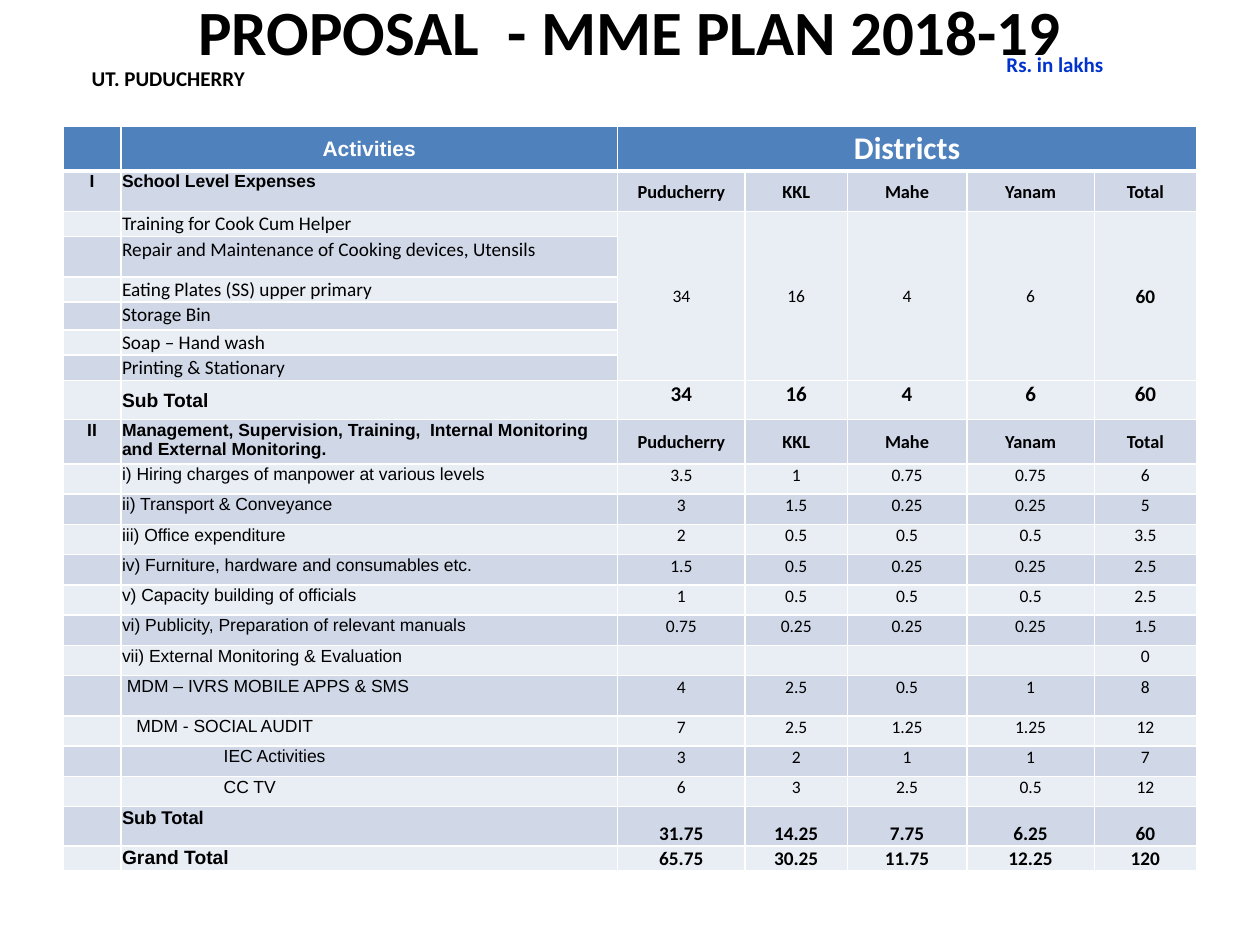
from lxml import etree
from pptx import Presentation
from pptx.dml.color import RGBColor
from pptx.enum.text import MSO_ANCHOR, PP_ALIGN
from pptx.oxml.ns import qn
from pptx.util import Cm, Pt

LEFT, CENTER = PP_ALIGN.LEFT, PP_ALIGN.CENTER
TOP, MIDDLE, BOTTOM = MSO_ANCHOR.TOP, MSO_ANCHOR.MIDDLE, MSO_ANCHOR.BOTTOM
COLORS = {"header": "4F81BD", "dark": "D0D8E8", "light": "E9EDF4",
          "white": "FFFFFF", "black": "000000", "blue": "0033CC"}

# Content: kind of row, number, activity, district values
DISTRICTS = ["Puducherry", "KKL", "Mahe", "Yanam", "Total"]
ROWS = [
    ("header", "", "Activities", ["Districts"]),
    ("section", "I", "School Level Expenses", DISTRICTS),
    ("school", "", "Training for Cook Cum Helper", ["34", "16", "4", "6", "60"]),
    ("school", "", "Repair and Maintenance of Cooking devices, Utensils", []),
    ("school", "", "Eating Plates (SS) upper primary", []),
    ("school", "", "Storage Bin", []),
    ("school", "", "Soap – Hand wash", []),
    ("school", "", "Printing & Stationary", []),
    ("school total", "", "Sub Total", ["34", "16", "4", "6", "60"]),
    ("section", "II", "Management, Supervision, Training,  Internal Monitoring "
     "and External Monitoring.", DISTRICTS),
    ("item", "", "i) Hiring charges of manpower at various levels",
     ["3.5", "1", "0.75", "0.75", "6"]),
    ("item", "", "ii) Transport & Conveyance", ["3", "1.5", "0.25", "0.25", "5"]),
    ("item", "", "iii) Office expenditure", ["2", "0.5", "0.5", "0.5", "3.5"]),
    ("item", "", "iv) Furniture, hardware and consumables etc.",
     ["1.5", "0.5", "0.25", "0.25", "2.5"]),
    ("item", "", "v) Capacity building of officials", ["1", "0.5", "0.5", "0.5", "2.5"]),
    ("item", "", "vi) Publicity, Preparation of relevant manuals",
     ["0.75", "0.25", "0.25", "0.25", "1.5"]),
    ("item", "", "vii) External Monitoring & Evaluation", ["", "", "", "", "0"]),
    ("item", "", "MDM – IVRS MOBILE APPS & SMS", ["4", "2.5", "0.5", "1", "8"]),
    ("item", "", "MDM - SOCIAL AUDIT", ["7", "2.5", "1.25", "1.25", "12"]),
    ("item", "", "IEC Activities", ["3", "2", "1", "1", "7"]),
    ("item", "", "CC TV", ["6", "3", "2.5", "0.5", "12"]),
    ("plan total", "", "Sub Total", ["31.75", "14.25", "7.75", "6.25", "60"]),
    ("grand total", "", "Grand Total", ["65.75", "30.25", "11.75", "12.25", "120"]),
]
INDENTS = {"MDM – IVRS MOBILE APPS & SMS": 0.1, "MDM - SOCIAL AUDIT": 0.29,
           "IEC Activities": 2.05, "CC TV": 2.05}

# Format of the activity and of the values, by kind of row
ARIAL_BOLD = dict(font="Arial", bold=True)
FORMATS = {
    "header": (dict(ARIAL_BOLD, size=12, color="white", align=CENTER, anchor=MIDDLE),
               dict(size=18, bold=True, color="white", anchor=MIDDLE)),
    "section": (dict(ARIAL_BOLD), dict(size=10.5, bold=True, anchor=MIDDLE)),
    "school": (dict(size=11), dict(anchor=MIDDLE)),
    "school total": (dict(ARIAL_BOLD, size=11, anchor=MIDDLE), dict(size=12, bold=True)),
    "item": (dict(font="Arial"), dict()),
    "plan total": (dict(ARIAL_BOLD, size=10.5), dict(size=11, bold=True, anchor=BOTTOM)),
    "grand total": (dict(ARIAL_BOLD, size=11), dict(size=11, bold=True, anchor=BOTTOM)),
}

# Sizes in centimetres
COLUMN_WIDTHS = [1.17, 10.01, 2.57, 2.06, 2.41, 2.57, 2.06]
HEIGHTS = {"header": 0.91, "section": 0.81, "school": 0.51, "school total": 0.79,
           "item": 0.61, "plan total": 0.79, "grand total": 0.51}
SPECIAL_HEIGHTS = {3: 0.81, 5: 0.56, 9: 0.89, 17: 0.81}
FIRST_SCHOOL, LAST_SCHOOL = 2, 7


def write(frame, text, size=10, font="Calibri", bold=False, color="black",
          align=CENTER, spacing=None, indent=0):
    para = frame.paragraphs[0]
    para.alignment = align
    if spacing:
        para.line_spacing = spacing
    if indent:
        para._p.get_or_add_pPr().set("marL", str(Cm(indent)))
    if not text:  # keeps an empty cell from stretching its row
        etree.SubElement(para._p, qn("a:endParaRPr"), sz="800")
        return
    span = para.add_run()
    span.text = text
    span.font.size, span.font.name, span.font.bold = Pt(size), font, bold
    span.font.color.rgb = RGBColor.from_string(COLORS[color])


def add_text(page, text, left, top, width, height, anchor=TOP, wrap=True, **style):
    box = page.shapes.add_textbox(Cm(left), Cm(top), Cm(width), Cm(height))
    box.text_frame.word_wrap = wrap
    box.text_frame.vertical_anchor = anchor
    write(box.text_frame, text, **style)


def fill_cell(cell, text, fill, bottom=1, anchor=TOP, **style):
    properties = cell._tc.get_or_add_tcPr()
    for side in "LRTB":
        points = bottom if side == "B" else 1
        line = etree.SubElement(properties, qn("a:ln" + side), w=str(Pt(points)))
        solid = etree.SubElement(line, qn("a:solidFill"))
        etree.SubElement(solid, qn("a:srgbClr"), val=COLORS["white"])
    cell.fill.solid()
    cell.fill.fore_color.rgb = RGBColor.from_string(COLORS[fill])
    cell.margin_left = cell.margin_right = cell.margin_top = Cm(0.02)
    cell.margin_bottom = 0
    cell.vertical_anchor = anchor
    write(cell.text_frame, text, **style)


def add_plan_table(page):
    heights = [SPECIAL_HEIGHTS.get(i, HEIGHTS[row[0]]) for i, row in enumerate(ROWS)]
    table = page.shapes.add_table(
        len(ROWS), len(COLUMN_WIDTHS), Cm(1.27), Cm(2.54),
        Cm(sum(COLUMN_WIDTHS)), Cm(sum(heights))).table
    for column, width in zip(table.columns, COLUMN_WIDTHS):
        column.width = Cm(width)
    for row, height in zip(table.rows, heights):
        row.height = Cm(height)

    # Merged cells: district heading, and one school amount per district
    last = len(COLUMN_WIDTHS) - 1
    table.cell(0, 2).merge(table.cell(0, last))
    for column in range(2, last + 1):
        table.cell(FIRST_SCHOOL, column).merge(table.cell(LAST_SCHOOL, column))

    for index, (kind, number, activity, values) in enumerate(ROWS):
        header = kind == "header"
        band = "header" if header else ("dark" if index % 2 else "light")
        edge = dict(fill=band, bottom=3 if header else 1)
        label_format, value_format = FORMATS[kind]
        fill_cell(table.cell(index, 0), number, **edge, **ARIAL_BOLD)
        fill_cell(table.cell(index, 1), activity, indent=INDENTS.get(activity, 0),
                  **edge, **{"align": LEFT, **label_format})
        padded = values + [""] * (len(DISTRICTS) - len(values))
        for column, value in enumerate(padded, 2):
            style = dict(value_format)
            if kind == "school":
                edge["fill"] = "light"
                if column == last:
                    style.update(size=11, bold=True)
            fill_cell(table.cell(index, column), value, **edge, **style)


def main():
    deck = Presentation()
    deck.slide_width, deck.slide_height = Cm(25.4), Cm(19.05)
    page = deck.slides.add_slide(deck.slide_layouts[6])
    add_text(page, "PROPOSAL  - MME PLAN 2018-19", 1.27, 0.2, 22.86, 0.84,
             anchor=MIDDLE, size=36, bold=True)
    add_plan_table(page)
    add_text(page, "Rs. in lakhs", 20.04, 0.91, 2.49, 0.76, wrap=False,
             size=12, bold=True, color="blue", align=LEFT)
    add_text(page, "UT. PUDUCHERRY", 0.64, 1.27, 5.51, 0.71, anchor=MIDDLE,
             size=12, bold=True, spacing=0.8)
    deck.save("out.pptx")


if __name__ == "__main__":
    main()
